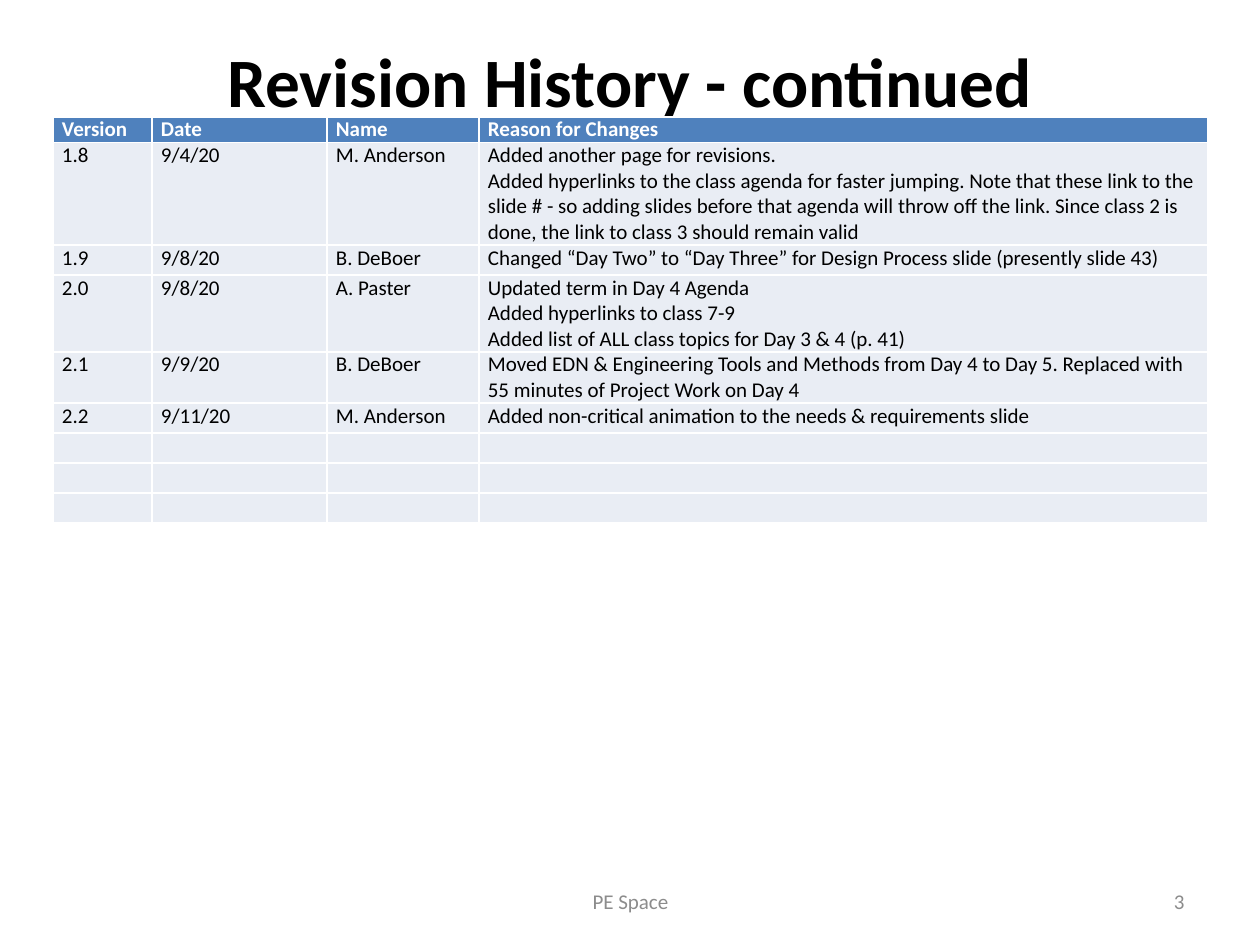
from pptx import Presentation
from pptx.dml.color import RGBColor
from pptx.enum.text import MSO_ANCHOR, PP_ALIGN
from pptx.util import Emu, Pt

BLACK = RGBColor(0x00, 0x00, 0x00)
WHITE = RGBColor(0xFF, 0xFF, 0xFF)
GRAY = RGBColor(0x8C, 0x8C, 0x8C)
HEADER_BLUE = RGBColor(0x4F, 0x81, 0xBD)
ROW_BLUE = RGBColor(0xE9, 0xED, 0xF4)

COLUMN_WIDTHS = [99, 175, 152, 729]
ROW_HEIGHTS = [9, 38] + [30] * 7
HISTORY = [
    ("Version", "Date", "Name", "Reason for Changes"),
    ("1.8", "9/4/20", "M. Anderson",
     "Added another page for revisions.\n"
     "Added hyperlinks to the class agenda for faster jumping. Note that these "
     "link to the slide # - so adding slides before that agenda will throw off "
     "the link. Since class 2 is done, the link to class 3 should remain valid"),
    ("1.9", "9/8/20", "B. DeBoer",
     "Changed “Day Two” to “Day Three” for Design Process slide (presently slide 43)"),
    ("2.0", "9/8/20", "A. Paster",
     "Updated term in Day 4 Agenda\n"
     "Added hyperlinks to class 7-9\n"
     "Added list of ALL class topics for Day 3 & 4 (p. 41)"),
    ("2.1", "9/9/20", "B. DeBoer",
     "Moved EDN & Engineering Tools and Methods from Day 4 to Day 5. "
     "Replaced with 55 minutes of Project Work on Day 4"),
    ("2.2", "9/11/20", "M. Anderson",
     "Added non-critical animation to the needs & requirements slide"),
] + [("", "", "", "")] * 3


def px(length):
    """Turn pixels, 126 to the inch, into EMU."""
    return Emu(round(length * 914400 / 126))


def set_font(paragraph, size, color, bold=False):
    font = paragraph.font
    font.name = "Calibri"
    font.size = Pt(size)
    font.bold = bold
    font.color.rgb = color


deck = Presentation()
deck.slide_width, deck.slide_height = px(1260), px(945)
page = deck.slides.add_slide(deck.slide_layouts[5])

title = page.shapes.title
title.left, title.top, title.width, title.height = px(63), px(38), px(1134), px(157)
title.text_frame.text = "Revision History - continued"
title.text_frame.vertical_anchor = MSO_ANCHOR.TOP
title.text_frame.margin_top = 0
title.text_frame.paragraphs[0].alignment = PP_ALIGN.CENTER
set_font(title.text_frame.paragraphs[0], 39.6, BLACK, bold=True)

table = page.shapes.add_table(
    len(HISTORY), len(COLUMN_WIDTHS), px(53), px(117),
    px(sum(COLUMN_WIDTHS)), px(sum(ROW_HEIGHTS))).table
table.horz_banding = False
for column, width in zip(table.columns, COLUMN_WIDTHS):
    column.width = px(width)

for row_index, (row, height, texts) in enumerate(zip(table.rows, ROW_HEIGHTS, HISTORY)):
    row.height = px(height)
    is_header = row_index == 0
    for cell, text in zip(row.cells, texts):
        cell.fill.solid()
        cell.fill.fore_color.rgb = HEADER_BLUE if is_header else ROW_BLUE
        cell.margin_left = cell.margin_right = px(9)
        cell.margin_top = cell.margin_bottom = 0
        cell.text = text
        for paragraph in cell.text_frame.paragraphs:
            set_font(paragraph, 12, WHITE if is_header else BLACK, is_header)
            if not text:
                # An empty cell takes its line height from the end mark
                paragraph._p.get_or_add_endParaRPr().set("sz", "1200")

for text, left, width, alignment in [
    ("PE Space", 431, 399, PP_ALIGN.CENTER),
    ("3", 903, 294, PP_ALIGN.RIGHT),
]:
    box = page.shapes.add_textbox(px(left), px(876), px(width), px(50))
    box.text_frame.word_wrap = True
    box.text_frame.vertical_anchor = MSO_ANCHOR.MIDDLE
    box.text_frame.text = text
    box.text_frame.paragraphs[0].alignment = alignment
    set_font(box.text_frame.paragraphs[0], 12, GRAY)

deck.save("out.pptx")
